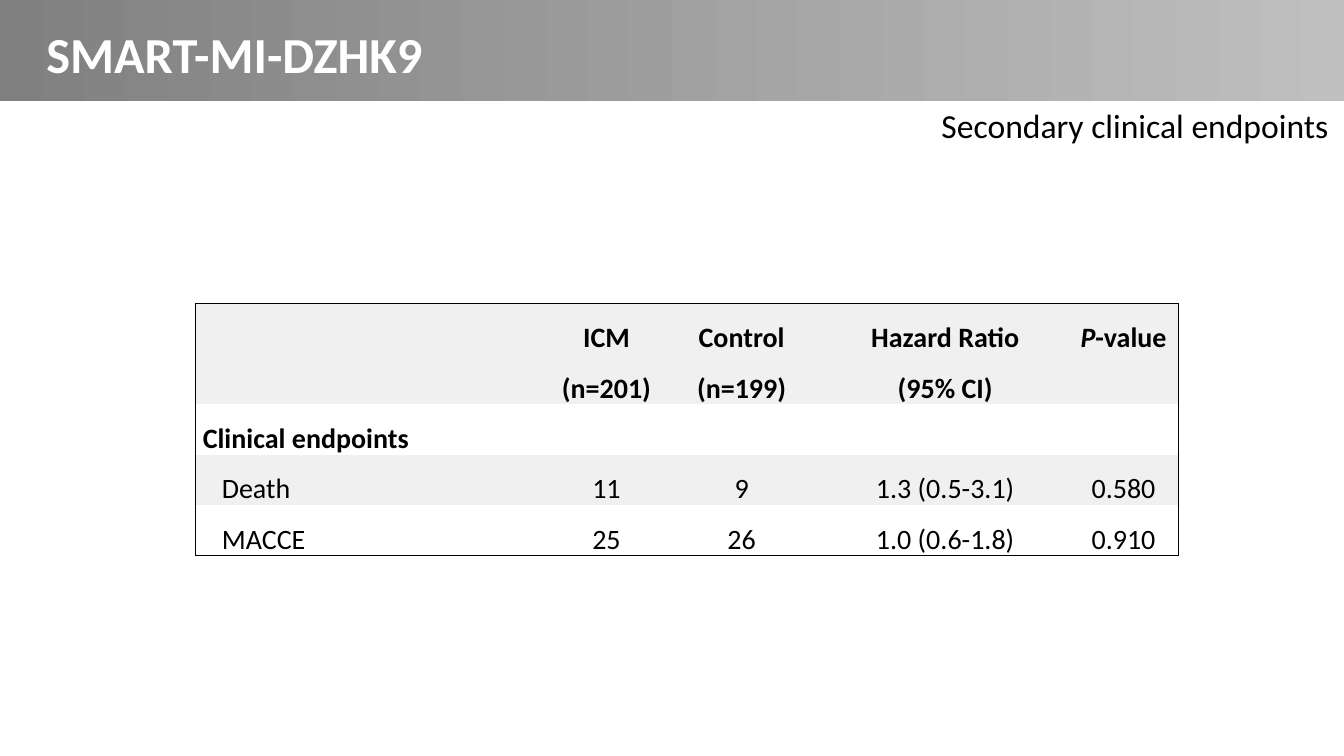
from lxml.etree import SubElement
from pptx import Presentation
from pptx.dml.color import RGBColor
from pptx.enum.shapes import MSO_SHAPE
from pptx.enum.text import MSO_ANCHOR, PP_ALIGN
from pptx.oxml.ns import qn
from pptx.util import Cm, Pt

PLAIN_TABLE = "{2D5ABB26-0587-4C30-8999-92F81FD0307C}"
COLUMN_WIDTHS = [8.97, 2.77, 4.04, 6.22, 2.77]
ROW_HEIGHTS = [2.54, 1.27, 1.27, 1.27]
ROW_INDENTS = [0, 0, 0.48, 0.48]

# A cell is a list of lines; a line is a list of (text, italic) runs.
HEADER = [
    [],
    [[("ICM", False)], [("(n=201)", False)]],
    [[("Control", False)], [("(n=199)", False)]],
    [[("Hazard Ratio", False)], [("(95% CI)", False)]],
    [[("P", True), ("-value", False)]],
]
ENDPOINTS = [
    ["Clinical endpoints", "", "", "", ""],
    ["Death", "11", "9", "1.3 (0.5-3.1)", "0.580"],
    ["MACCE", "25", "26", "1.0 (0.6-1.8)", "0.910"],
]


def color(hex_code):
    return RGBColor.from_string(hex_code)


def assign(target, values):
    for name, value in values.items():
        setattr(target, name, value)


class SlideBuilder:
    font_name = "Calibri"
    ink = "000000"
    bands = ["F0F0F0", "FFFFFF"]

    def __init__(self, slide):
        self.slide = slide

    def run(self, paragraph, text, size, ink, **formats):
        run = paragraph.add_run()
        run.text = text
        assign(run.font, {"name": self.font_name, "size": Pt(size), **formats})
        run.font.color.rgb = color(ink)

    def gradient_bar(self, left, top, width, height, hex_codes):
        bar = self.slide.shapes.add_shape(
            MSO_SHAPE.RECTANGLE, Cm(left), Cm(top), Cm(width), Cm(height))
        bar.shadow.inherit = False
        bar.line.fill.background()
        bar.fill.gradient()
        bar.fill.gradient_angle = 0
        for stop, hex_code in zip(bar.fill.gradient_stops, hex_codes):
            stop.color.rgb = color(hex_code)

    def label(self, left, top, width, height, text, size, ink,
              align=PP_ALIGN.LEFT, frame_formats=None, **formats):
        box = self.slide.shapes.add_textbox(Cm(left), Cm(top), Cm(width), Cm(height))
        assign(box.text_frame, frame_formats or {})
        paragraph = box.text_frame.paragraphs[0]
        paragraph.alignment = align
        self.run(paragraph, text, size, ink, **formats)

    def border(self, cell, sides):
        """Draw the given sides, which must come in the order L, R, T, B."""
        properties = cell._tc.get_or_add_tcPr()
        for side in sides:
            line = SubElement(properties, qn(f"a:ln{side}"), w=str(Pt(1)))
            fill = SubElement(line, qn("a:solidFill"))
            SubElement(fill, qn("a:srgbClr"), val=self.ink)

    def fill_cell(self, cell, lines, align, bold, indent):
        assign(cell, {"margin_left": Cm(0.18), "margin_right": Cm(0.18),
                      "margin_top": 0, "margin_bottom": 0,
                      "vertical_anchor": MSO_ANCHOR.TOP})
        frame = cell.text_frame
        for index, line in enumerate(lines):
            paragraph = frame.add_paragraph() if index else frame.paragraphs[0]
            assign(paragraph, {"alignment": align, "line_spacing": 1.5})
            if indent:
                paragraph._p.get_or_add_pPr().set("marL", str(Cm(indent)))
            for text, italic in line:
                self.run(paragraph, text, 20, self.ink, bold=bold, italic=italic)

    def table(self, left, top, rows, widths, heights, indents):
        table = self.slide.shapes.add_table(
            len(rows), len(widths), Cm(left), Cm(top),
            Cm(sum(widths)), Cm(sum(heights))).table
        assign(table, {"first_row": False, "horz_banding": False})
        table._tbl.tblPr.find(qn("a:tableStyleId")).text = PLAIN_TABLE
        for column, width in zip(table.columns, widths):
            column.width = Cm(width)
        last_row, last_column = len(rows) - 1, len(widths) - 1
        for r, row in enumerate(rows):
            table.rows[r].height = Cm(heights[r])
            for c, lines in enumerate(row):
                cell = table.cell(r, c)
                align = PP_ALIGN.CENTER if c else PP_ALIGN.LEFT
                self.fill_cell(cell, lines, align, r < 2, 0 if c else indents[r])
                edges = {"L": c == 0, "R": c == last_column,
                         "T": r == 0, "B": r == last_row}
                self.border(cell, [side for side, outer in edges.items() if outer])
                cell.fill.solid()
                cell.fill.fore_color.rgb = color(self.bands[r % 2])


def main():
    presentation = Presentation()
    assign(presentation, {"slide_width": Cm(33.87), "slide_height": Cm(19.05)})
    builder = SlideBuilder(presentation.slides.add_slide(presentation.slide_layouts[6]))

    builder.gradient_bar(0, 0, 33.87, 2.54, ["808080", "BFBFBF"])
    no_margins = {f"margin_{side}": 0 for side in ("left", "top", "right", "bottom")}
    builder.label(1.17, 0.58, 25.96, 1.55, "SMART-MI-DZHK9", 36, "FFFFFF",
                  frame_formats={"word_wrap": True, **no_margins}, bold=True)
    builder.label(23.42, 2.51, 10.31, 1.27, "Secondary clinical endpoints", 24,
                  builder.ink, PP_ALIGN.RIGHT, {"word_wrap": False})

    endpoint_rows = [[[[(text, False)]] if text else [] for text in row]
                     for row in ENDPOINTS]
    builder.table(4.93, 7.65, [HEADER, *endpoint_rows],
                  COLUMN_WIDTHS, ROW_HEIGHTS, ROW_INDENTS)
    presentation.save("out.pptx")


if __name__ == "__main__":
    main()
